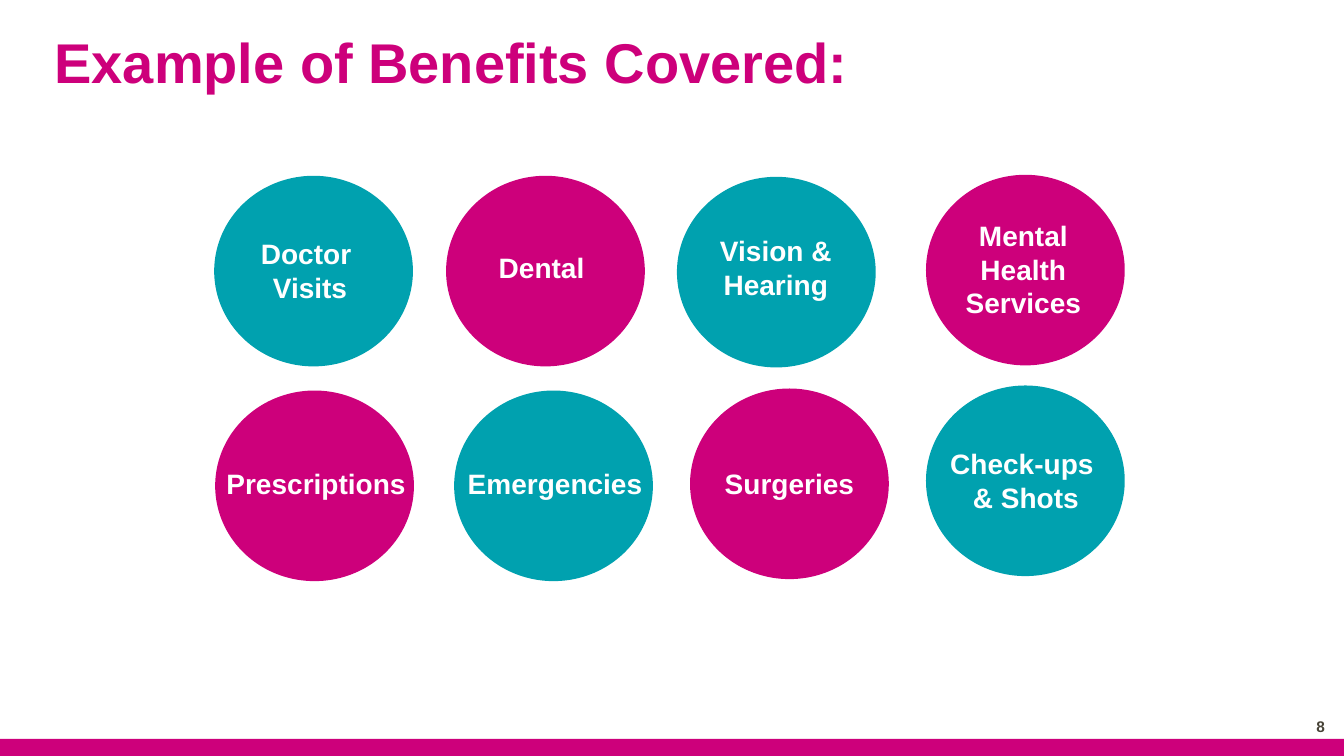
from dataclasses import dataclass

from pptx import Presentation
from pptx.dml.color import RGBColor
from pptx.enum.shapes import MSO_SHAPE
from pptx.enum.text import MSO_ANCHOR, MSO_AUTO_SIZE, PP_ALIGN
from pptx.shapes.autoshape import Shape
from pptx.slide import Slide
from pptx.text.text import TextFrame
from pptx.util import Inches, Pt

PINK = RGBColor(0xCD, 0x00, 0x7B)
TEAL = RGBColor(0x00, 0xA1, 0xAF)
WHITE = RGBColor(0xFF, 0xFF, 0xFF)
GREY = RGBColor(0x47, 0x43, 0x37)

WIDE, HIGH = 13.33, 7.5
DISC_W, DISC_H = 1.94, 1.86


@dataclass
class Label:
    text: str
    left: float
    top: float
    width: float
    height: float = 0.44


@dataclass
class Disc:
    left: float
    top: float
    color: RGBColor
    label: Label


DISCS = [
    # Top row
    Disc(2.14, 1.76, TEAL, Label("Doctor \nVisits", 2.21, 2.3, 1.73, 0.77)),
    Disc(4.44, 1.76, PINK, Label("Dental ", 4.72, 2.44, 1.38)),
    Disc(6.73, 1.77, TEAL, Label("Vision & Hearing", 6.88, 2.27, 1.63, 0.77)),
    Disc(9.2, 1.75, PINK, Label("Mental Health Services", 9.2, 2.12, 1.9, 1.11)),
    # Bottom row
    Disc(2.15, 3.89, PINK, Label("Prescriptions", 1.92, 4.58, 2.43)),
    Disc(4.52, 3.89, TEAL, Label("Emergencies", 4.33, 4.58, 2.35)),
    Disc(6.86, 3.87, PINK, Label("Surgeries", 6.88, 4.58, 1.9)),
    Disc(9.2, 3.84, TEAL, Label("Check-ups \n& Shots", 9.06, 4.38, 2.23, 0.77)),
]


def write(frame: TextFrame, text: str, size: int, color: RGBColor,
          align: PP_ALIGN) -> None:
    frame.text = text
    frame.word_wrap = True
    for para in frame.paragraphs:
        para.alignment = align
        for run in para.runs:
            font = run.font
            font.name, font.size, font.bold = "Arial", Pt(size), True
            font.color.rgb = color


def clear_insets(frame: TextFrame) -> None:
    frame.margin_left = frame.margin_right = 0
    frame.margin_top = frame.margin_bottom = 0


def add_solid(slide: Slide, kind: MSO_SHAPE, left: float, top: float,
              width: float, height: float, color: RGBColor) -> Shape:
    shape = slide.shapes.add_shape(
        kind, Inches(left), Inches(top), Inches(width), Inches(height))
    shape.shadow.inherit = False
    shape.fill.solid()
    shape.fill.fore_color.rgb = color
    return shape


def add_disc(slide: Slide, disc: Disc) -> None:
    oval = add_solid(slide, MSO_SHAPE.OVAL, disc.left, disc.top,
                     DISC_W, DISC_H, disc.color)
    oval.line.color.rgb = disc.color
    oval.line.width = Pt(2.25)


def add_label(slide: Slide, label: Label) -> None:
    box = slide.shapes.add_textbox(
        Inches(label.left), Inches(label.top),
        Inches(label.width), Inches(label.height))
    write(box.text_frame, label.text, 20, WHITE, PP_ALIGN.CENTER)
    box.text_frame.auto_size = MSO_AUTO_SIZE.SHAPE_TO_FIT_TEXT


def add_title(slide: Slide, text: str) -> None:
    title = slide.shapes.title
    title.left, title.top = Inches(0.54), Inches(0.27)
    title.width, title.height = Inches(10.93), Inches(0.67)
    frame = title.text_frame
    write(frame, text, 40, PINK, PP_ALIGN.LEFT)
    clear_insets(frame)
    frame.vertical_anchor = MSO_ANCHOR.BOTTOM
    frame.auto_size = MSO_AUTO_SIZE.SHAPE_TO_FIT_TEXT


def add_number(slide: Slide, text: str) -> None:
    box = slide.shapes.add_textbox(
        Inches(12.36), Inches(7.01), Inches(0.78), Inches(0.4))
    frame = box.text_frame
    write(frame, text, 11, GREY, PP_ALIGN.RIGHT)
    clear_insets(frame)
    frame.vertical_anchor = MSO_ANCHOR.MIDDLE


def main() -> None:
    deck = Presentation()
    deck.slide_width, deck.slide_height = Inches(WIDE), Inches(HIGH)
    slide = deck.slides.add_slide(deck.slide_layouts[5])

    # Footer bar and title
    bar = add_solid(slide, MSO_SHAPE.RECTANGLE, 0, 7.33, WIDE, 0.17, PINK)
    bar.line.fill.background()
    add_title(slide, "Example of Benefits Covered:")

    # Benefits: discs below, labels on top
    for disc in DISCS:
        add_disc(slide, disc)
    for disc in DISCS:
        add_label(slide, disc.label)

    # Slide number
    add_number(slide, "8")
    deck.save("out.pptx")


if __name__ == "__main__":
    main()
